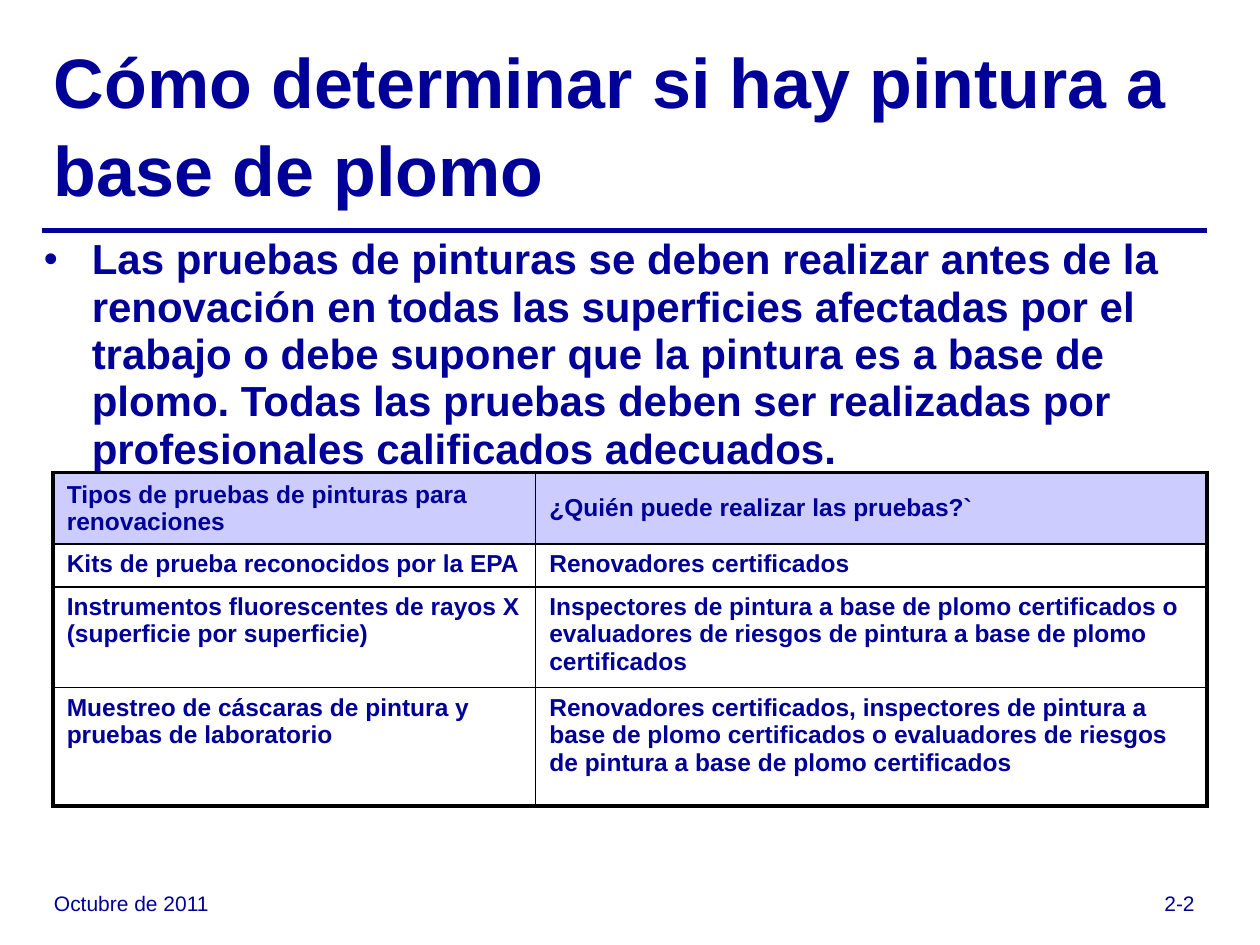
from dataclasses import dataclass

from lxml import etree
from pptx import Presentation
from pptx.dml.color import RGBColor
from pptx.enum.shapes import MSO_CONNECTOR
from pptx.enum.text import MSO_ANCHOR, PP_ALIGN
from pptx.oxml.ns import qn
from pptx.util import Inches, Pt

STRAIGHT = MSO_CONNECTOR.STRAIGHT
TOP, MIDDLE = MSO_ANCHOR.TOP, MSO_ANCHOR.MIDDLE
LEFT, RIGHT = PP_ALIGN.LEFT, PP_ALIGN.RIGHT


@dataclass(frozen=True)
class Theme:
    font: str = "Arial"
    navy: RGBColor = RGBColor(0x00, 0x00, 0x99)
    lavender: RGBColor = RGBColor(0xCC, 0xCC, 0xFF)
    border: str = "000000"
    title: Pt = Pt(40)
    body: Pt = Pt(24)
    table: Pt = Pt(14)
    footer: Pt = Pt(12)
    rule: Pt = Pt(3)
    outer: Pt = Pt(2.25)
    inner: Pt = Pt(1)


theme = Theme()


def write(frame, text, size, bold=True, align=LEFT, spacing=1.0):
    """Fill the first paragraph of a frame with one styled run and return it."""
    frame.word_wrap = True
    paragraph = frame.paragraphs[0]
    paragraph.alignment = align
    paragraph.line_spacing = spacing
    run = paragraph.add_run()
    run.text = text
    run.font.name = theme.font
    run.font.size = size
    run.font.bold = bold
    run.font.color.rgb = theme.navy
    return paragraph


def add_border(cell, side, width):
    line = etree.SubElement(cell._tc.get_or_add_tcPr(), qn(f"a:ln{side}"), w=str(width))
    fill = etree.SubElement(line, qn("a:solidFill"))
    etree.SubElement(fill, qn("a:srgbClr"), val=theme.border)


prs = Presentation()
prs.slide_width, prs.slide_height = Inches(10), Inches(7.5)
slide = prs.slides.add_slide(prs.slide_layouts[6])
shapes = slide.shapes

# Rule under the title
rule = shapes.add_connector(STRAIGHT, Inches(0.33), Inches(1.83), Inches(9.58), Inches(1.83))
rule.line.color.rgb = theme.navy
rule.line.width = theme.rule
etree.SubElement(rule._element.spPr, qn("a:effectLst"))

# Footer
for left, text, align in ((0.33, "Octubre de 2011", LEFT), (7.5, "2-2", RIGHT)):
    footer = shapes.add_textbox(Inches(left), Inches(7), Inches(2.08), Inches(0.5))
    write(footer.text_frame, text, theme.footer, bold=False, align=align, spacing=1.1)

# Title
title = shapes.add_textbox(Inches(0.33), Inches(0.35), Inches(9.25), Inches(1.25))
title.text_frame.vertical_anchor = MIDDLE
write(title.text_frame, "Cómo determinar si hay pintura a base de plomo", theme.title, spacing=1.04)

# Requirement
requirement = shapes.add_textbox(Inches(0.25), Inches(1.83), Inches(9.58), Inches(1.42))
paragraph = write(
    requirement.text_frame,
    "Las pruebas de pinturas se deben realizar antes de la renovación en todas las "
    "superficies afectadas por el trabajo o debe suponer que la pintura es a base de "
    "plomo. Todas las pruebas deben ser realizadas por profesionales calificados adecuados.",
    theme.body,
    spacing=0.94,
)
properties = paragraph._p.get_or_add_pPr()
properties.set("marL", str(Inches(0.38)))
properties.set("indent", str(-Inches(0.38)))
etree.SubElement(properties, qn("a:buSzPct"), val="95000")
etree.SubElement(properties, qn("a:buFont"), typeface=theme.font)
etree.SubElement(properties, qn("a:buChar"), char="•")

# Table of tests
tests = [
    ("Tipos de pruebas de pinturas para renovaciones", "¿Quién puede realizar las pruebas?`"),
    ("Kits de prueba reconocidos por la EPA", "Renovadores certificados"),
    (
        "Instrumentos fluorescentes de rayos X (superficie por superficie)",
        "Inspectores de pintura a base de plomo certificados o evaluadores de riesgos "
        "de pintura a base de plomo certificados",
    ),
    (
        "Muestreo de cáscaras de pintura y pruebas de laboratorio",
        "Renovadores certificados, inspectores de pintura a base de plomo certificados o "
        "evaluadores de riesgos de pintura a base de plomo certificados",
    ),
]
column_widths = (3.83, 5.33)
row_heights = (0.54, 0.34, 0.76, 0.94)
table = shapes.add_table(
    len(tests), len(column_widths), Inches(0.42), Inches(3.75),
    Inches(sum(column_widths)), Inches(sum(row_heights)),
).table
table.horz_banding = False
for column, width in zip(table.columns, column_widths):
    column.width = Inches(width)

last_row, last_column = len(tests) - 1, len(column_widths) - 1
for r, (row, texts) in enumerate(zip(table.rows, tests)):
    row.height = Inches(row_heights[r])
    for c, (cell, text) in enumerate(zip(row.cells, texts)):
        cell.margin_left = cell.margin_right = Inches(0.11)
        cell.margin_top = cell.margin_bottom = Inches(0.05)
        cell.vertical_anchor = MIDDLE if r == 0 else TOP
        write(cell.text_frame, text, theme.table)
        on_edge = {"L": c == 0, "R": c == last_column, "T": r == 0, "B": r == last_row}
        for side, outside in on_edge.items():
            add_border(cell, side, theme.outer if outside else theme.inner)
        if r == 0:
            cell.fill.solid()
            cell.fill.fore_color.rgb = theme.lavender
        else:
            cell.fill.background()

prs.save("out.pptx")
